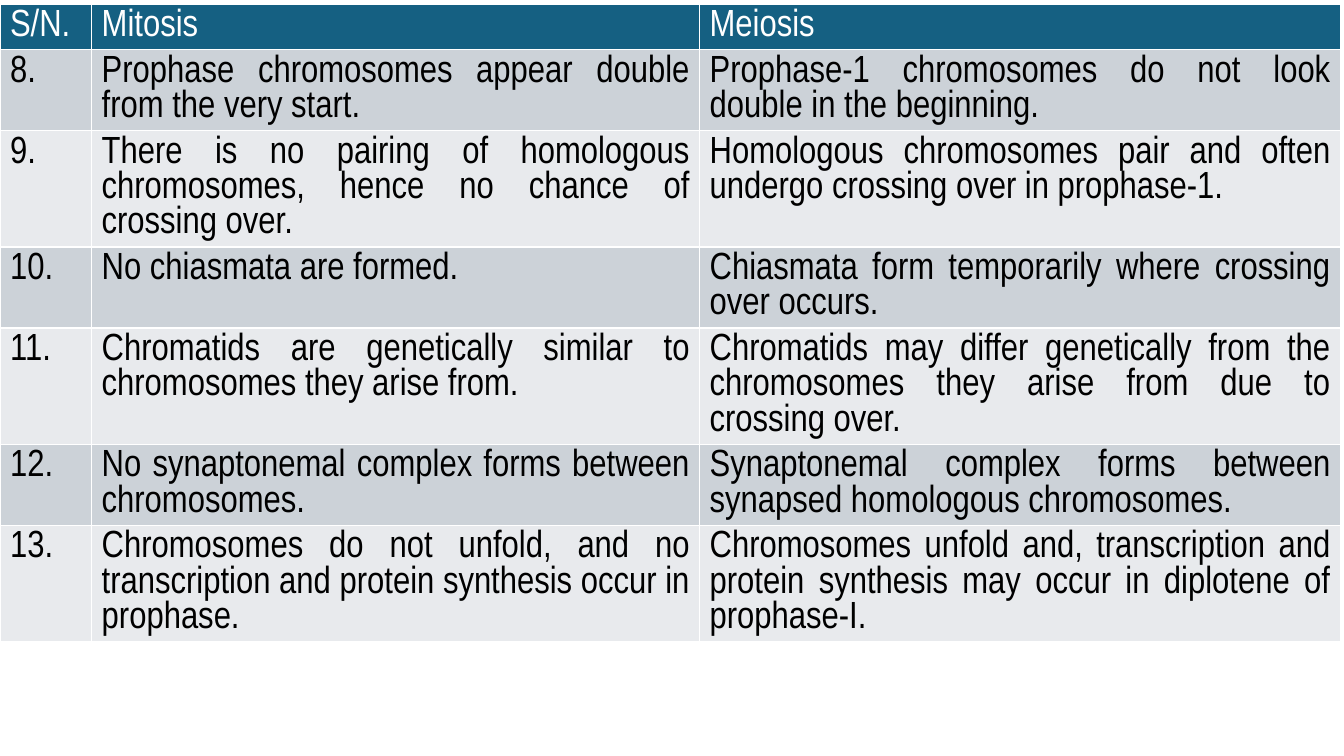
"""Build a slide with a table comparing mitosis and meiosis, points 8 to 13."""
from pptx import Presentation
from pptx.dml.color import RGBColor
from pptx.enum.text import PP_ALIGN
from pptx.util import Cm, Pt

JUSTIFY = PP_ALIGN.JUSTIFY
BLANK_LAYOUT = 6
FONT_NAME = "Arial Narrow"
FONT_SIZE = Pt(27)
COLORS = {
    "header": "156082",
    "header_text": "FFFFFF",
    "odd_row": "CCD2D8",
    "even_row": "E8EAED",
    "body_text": "000000",
}
HEADINGS = ("S/N.", "Mitosis", "Meiosis")
FIRST_NUMBER = 8
DIFFERENCES = [
    ("Prophase chromosomes appear double from the very start.",
     "Prophase-1 chromosomes do not look double in the beginning."),
    ("There is no pairing of homologous chromosomes, hence no chance of crossing over.",
     "Homologous chromosomes pair and often undergo crossing over in prophase-1."),
    ("No chiasmata are formed.",
     "Chiasmata form temporarily where crossing over occurs."),
    ("Chromatids are genetically similar to chromosomes they arise from.",
     "Chromatids may differ genetically from the chromosomes they arise from due to crossing over."),
    ("No synaptonemal complex forms between chromosomes.",
     "Synaptonemal complex forms between synapsed homologous chromosomes."),
    ("Chromosomes do not unfold, and no transcription and protein synthesis occur in prophase.",
     "Chromosomes unfold and, transcription and protein synthesis may occur in diplotene of prophase-I."),
]
COLUMN_WIDTHS = (Cm(2.31), Cm(15.32), Cm(16.15))
ROW_HEIGHT = Cm(1.04)
TABLE_TOP = Cm(0.1)


def fill_cell(cell, text, fill_color, text_color):
    """Give a cell its background and justified text."""
    cell.fill.solid()
    cell.fill.fore_color.rgb = RGBColor.from_string(fill_color)
    paragraph = cell.text_frame.paragraphs[0]
    paragraph.alignment = JUSTIFY
    run = paragraph.add_run()
    run.text = text
    run.font.name = FONT_NAME
    run.font.size = FONT_SIZE
    run.font.bold = False
    run.font.color.rgb = RGBColor.from_string(text_color)


def main():
    """Create the presentation and save it."""
    presentation = Presentation()
    presentation.slide_width = Cm(33.87)
    presentation.slide_height = Cm(19.05)
    slide = presentation.slides.add_slide(presentation.slide_layouts[BLANK_LAYOUT])

    rows = [HEADINGS] + [
        (f"{number}.", *difference)
        for number, difference in enumerate(DIFFERENCES, FIRST_NUMBER)
    ]
    table = slide.shapes.add_table(
        len(rows), len(HEADINGS), Cm(0), TABLE_TOP,
        sum(COLUMN_WIDTHS), ROW_HEIGHT * len(rows),
    ).table
    for column, width in zip(table.columns, COLUMN_WIDTHS):
        column.width = width

    for row_index, row in enumerate(rows):
        if row_index == 0:
            fill_color, text_color = COLORS["header"], COLORS["header_text"]
        else:
            fill_color = COLORS["odd_row" if row_index % 2 else "even_row"]
            text_color = COLORS["body_text"]
        for column_index, text in enumerate(row):
            fill_cell(table.cell(row_index, column_index), text, fill_color, text_color)

    presentation.save("out.pptx")


if __name__ == "__main__":
    main()
